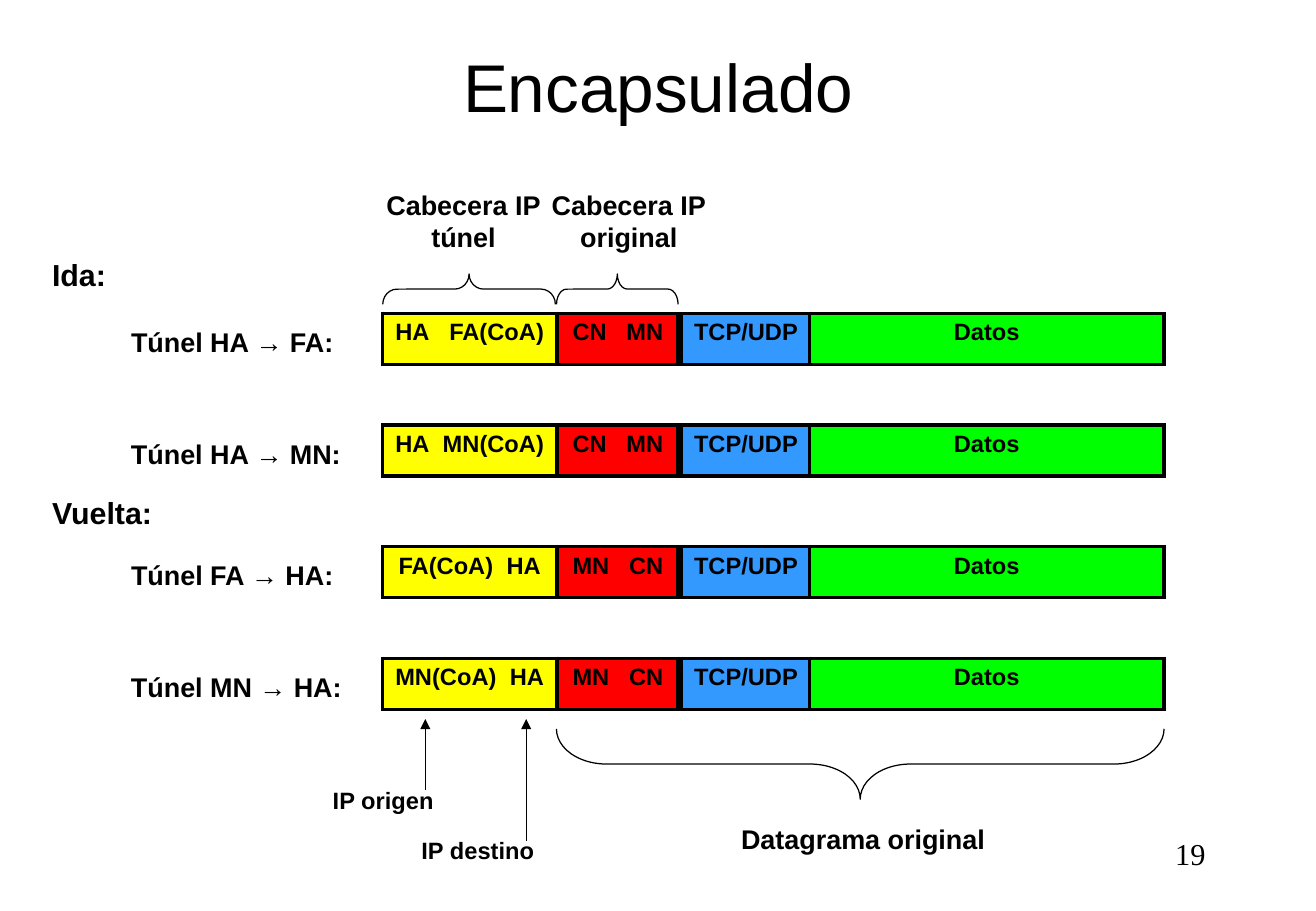
from lxml import etree
from pptx import Presentation
from pptx.dml.color import RGBColor
from pptx.enum import shapes, text
from pptx.oxml import ns
from pptx.util import Inches, Pt

BLACK = RGBColor(0, 0, 0)
YELLOW = RGBColor(255, 255, 0)
RED = RGBColor(255, 0, 0)
BLUE = RGBColor(0x33, 0x99, 0xFF)
GREEN = RGBColor(0, 255, 0)
LEFT, CENTER, RIGHT = text.PP_ALIGN.LEFT, text.PP_ALIGN.CENTER, text.PP_ALIGN.RIGHT

# Header fields: left, width, fill
FIELDS = [(3.15, 1.43, YELLOW), (4.59, 0.99, RED), (5.61, 1.06, BLUE), (6.66, 2.92, GREEN)]
FIELD_HEIGHT = 0.42
PAYLOAD = [(["TCP/UDP"], 0), (["Datos"], 0)]

# Tunnels: label, label width, top, then (addresses, extra points between them)
TUNNELS = [
    ("Túnel HA → FA:", 1.89, 2.58, (["HA", "FA(CoA)"], 7.8), (["CN", "MN"], 7.8)),
    ("Túnel HA → MN:", 1.94, 3.5, (["HA", "MN(CoA)"], 3.9), (["CN", "MN"], 7.8)),
    ("Túnel FA → HA:", 1.89, 4.5, (["FA(CoA)", "HA"], 3.9), (["MN", "CN"], 7.8)),
    ("Túnel MN → HA:", 1.94, 5.42, (["MN(CoA)", "HA"], 3.9), (["MN", "CN"], 7.8)),
]

# Captions: lines, left, top, width, height, size, alignment
CAPTIONS = [
    (["Cabecera IP", "túnel"], 3.08, 1.5, 1.47, 0.64, 16, CENTER),
    (["Cabecera IP", "original"], 4.44, 1.5, 1.47, 0.64, 16, CENTER),
    (["Ida:"], 0.33, 2.06, 0.65, 0.4, 18, LEFT),
    (["Vuelta:"], 0.33, 4.02, 1.03, 0.4, 18, LEFT),
    (["IP origen"], 2.64, 6.42, 1.03, 0.33, 14, LEFT),
    (["IP destino"], 3.37, 6.83, 1.13, 0.33, 14, LEFT),
    (["Datagrama original"], 6, 6.72, 2.22, 0.37, 16, LEFT),
]

# Braces: centre x, centre y, span, depth, rotation, curvature
BRACES = [
    (3.86, 2.38, 1.42, 0.25, 90, 0.47),
    (5.08, 2.38, 1, 0.25, 90, 0.33),
    (7.08, 6.29, 5, 0.58, 270, 0.71),
]

# Address arrows: x, bottom
ARROWS = [(3.5, 6.5), (4.33, 6.92)]
ARROW_TIP = 5.92


def add_run(paragraph, words, size, bold=True, font="Arial"):
    run = paragraph.add_run()
    run.text = words
    run.font.size = Pt(size)
    run.font.bold = bold
    run.font.name = font
    run.font.color.rgb = BLACK
    return run


def add_text(slide, lines, left, top, width, height, size, align,
             wrap=False, **style):
    box = slide.shapes.add_textbox(Inches(left), Inches(top), Inches(width), Inches(height))
    frame = box.text_frame
    frame.word_wrap = wrap
    for index, line in enumerate(lines):
        paragraph = frame.paragraphs[0] if index == 0 else frame.add_paragraph()
        paragraph.alignment = align
        add_run(paragraph, line, size, **style)
    return frame


def add_borders(cell):
    """Outline all four sides of a cell; borders precede the fill in the XML."""
    properties = cell._tc.get_or_add_tcPr()
    for index, side in enumerate(("a:lnL", "a:lnR", "a:lnT", "a:lnB")):
        border = etree.Element(ns.qn(side), w=str(Pt(2.25)))
        fill = etree.SubElement(border, ns.qn("a:solidFill"))
        etree.SubElement(fill, ns.qn("a:srgbClr"), val=str(BLACK))
        properties.insert(index, border)


def add_field(slide, left, top, width, color, words, gap):
    table = slide.shapes.add_table(1, 1, Inches(left), Inches(top),
                                   Inches(width), Inches(FIELD_HEIGHT)).table
    table.first_row = table.horz_banding = False
    cell = table.cell(0, 0)
    cell.fill.solid()
    cell.fill.fore_color.rgb = color
    cell.margin_left = cell.margin_right = Inches(0.05)
    add_borders(cell)
    paragraph = cell.text_frame.paragraphs[0]
    paragraph.alignment = CENTER
    for index, word in enumerate(words):
        if index:
            space = add_run(paragraph, " ", 14)
            space._r.get_or_add_rPr().set("spc", str(round(gap * 100)))
        add_run(paragraph, word, 14)


def add_brace(slide, x, y, span, depth, rotation, curvature):
    brace = slide.shapes.add_shape(
        shapes.MSO_SHAPE.LEFT_BRACE, Inches(x - depth / 2), Inches(y - span / 2),
        Inches(depth), Inches(span))
    brace.rotation = rotation
    brace.adjustments[0] = curvature
    brace.shadow.inherit = False
    brace.fill.background()
    brace.line.color.rgb = BLACK
    brace.line.width = Pt(0.75)


def add_arrow(slide, x, bottom):
    arrow = slide.shapes.add_connector(shapes.MSO_CONNECTOR.STRAIGHT, Inches(x),
                                       Inches(bottom), Inches(x), Inches(ARROW_TIP))
    arrow.line.color.rgb = BLACK
    arrow.line.width = Pt(0.75)
    etree.SubElement(arrow.line._get_or_add_ln(), ns.qn("a:tailEnd"), type="triangle")
    etree.SubElement(arrow._element.spPr, ns.qn("a:effectLst"))


def main():
    deck = Presentation()
    deck.slide_width, deck.slide_height = Inches(10.83), Inches(7.5)
    slide = deck.slides.add_slide(deck.slide_layouts[6])

    title = add_text(slide, ["Encapsulado"], 0.81, 0.33, 9.21, 0.75, 40, CENTER,
                     wrap=True, bold=False)
    title.vertical_anchor = text.MSO_ANCHOR.MIDDLE
    add_text(slide, ["19"], 7.76, 6.83, 2.26, 0.5, 18, RIGHT,
             wrap=True, bold=False, font="Times New Roman")

    for label, label_width, top, *headers in TUNNELS:
        add_text(slide, [label], 0.98, top + 0.05, label_width, 0.37, 16, LEFT)
        for (left, width, color), (words, gap) in zip(FIELDS, headers + PAYLOAD):
            add_field(slide, left, top, width, color, words, gap)

    for brace in BRACES:
        add_brace(slide, *brace)
    for arrow in ARROWS:
        add_arrow(slide, *arrow)
    for caption in CAPTIONS:
        add_text(slide, *caption)

    deck.save("out.pptx")


if __name__ == "__main__":
    main()
